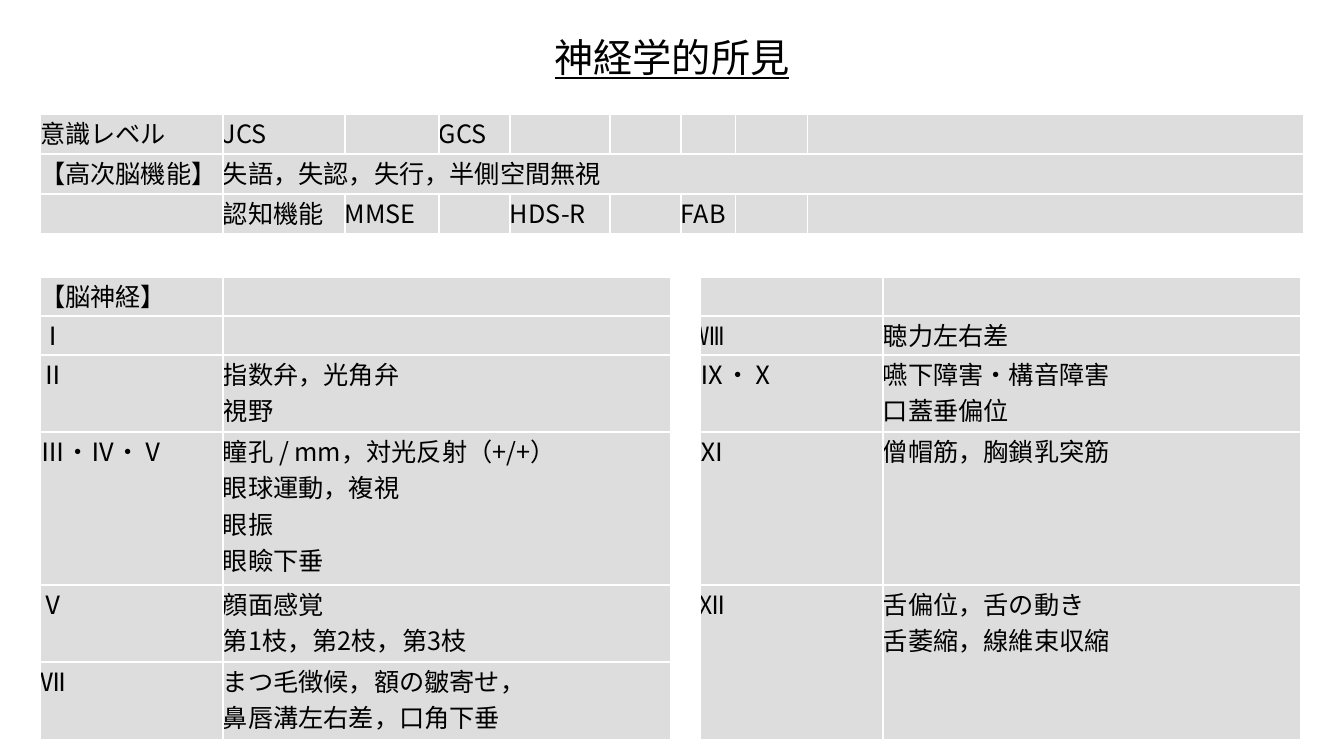
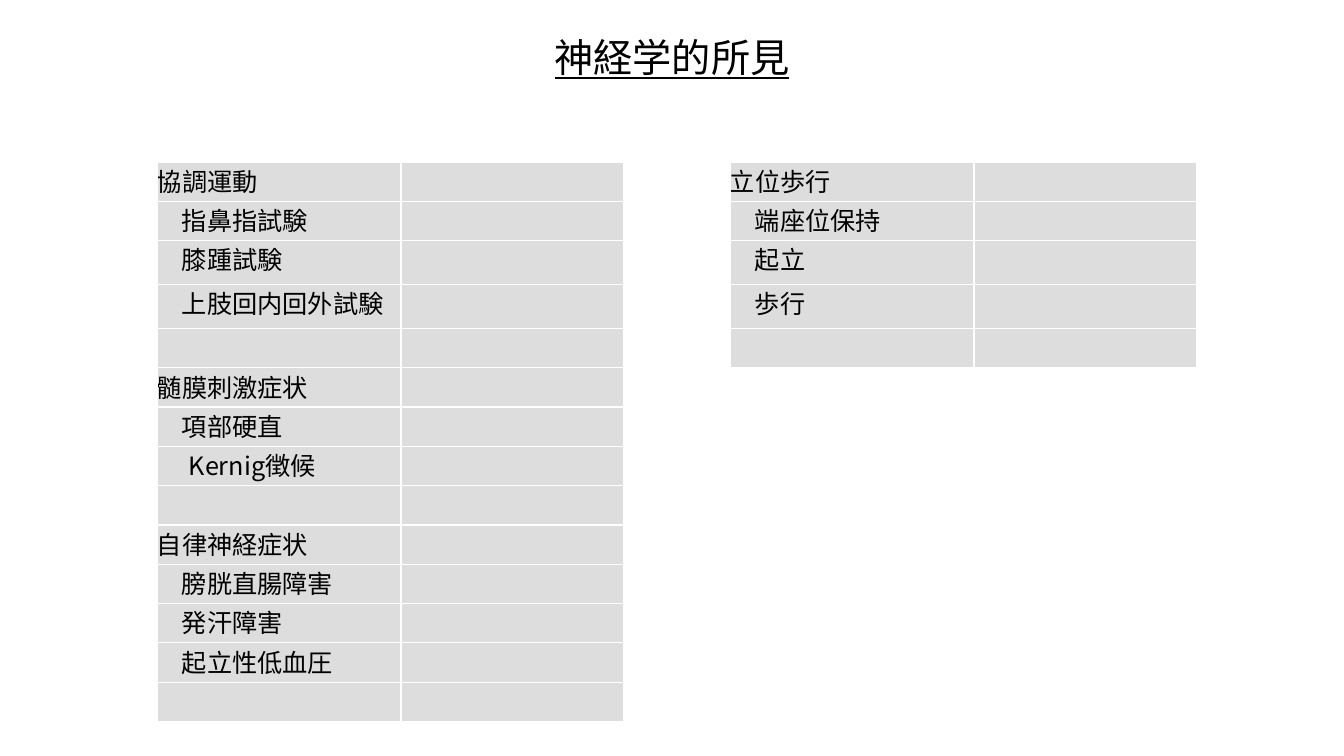
from lxml.etree import SubElement
from pptx import Presentation
from pptx.dml.color import RGBColor
from pptx.enum.text import MSO_ANCHOR, MSO_AUTO_SIZE, PP_ALIGN
from pptx.oxml import parse_xml
from pptx.oxml.ns import nsdecls, qn
from pptx.util import Emu, Pt

# Shared look
FONT = "Noto Sans CJK JP"
BLACK, WHITE, GRAY = "000000", "FFFFFF", "DDDDDD"
TITLE = "神経学的所見"
TITLE_BOX = (507, 10, 330, 93)
INDENT = 25
LATIN_GAP = 7  # extra space before an indented Latin word


def px(length):
    return Emu(round(length * 914400 / 100.8))


def color(code):
    return RGBColor.from_string(code)


def write(frame, text, size=18, align=None, underline=None, indent=0, margin=0):
    """Fill a text frame, one paragraph for each line of text."""
    frame.text = text
    for para in frame.paragraphs:
        para.alignment = align
        if indent:
            properties = para._p.get_or_add_pPr()
            properties.set("marL", str(px(indent)))
            properties.set("indent", "0")
        for span in para.runs:
            span.font.name = FONT
            span.font.size = Pt(size)
            span.font.underline = underline
            span.font.color.rgb = color(BLACK)
            east_asian = SubElement(span._r.get_or_add_rPr(), qn("a:ea"))
            east_asian.set("typeface", FONT)
    frame.margin_left = frame.margin_right = px(margin)
    frame.margin_top = frame.margin_bottom = px(margin)


def style_cell(cell):
    cell.margin_left = cell.margin_right = 0
    cell.margin_top = cell.margin_bottom = 0
    cell.fill.solid()
    cell.fill.fore_color.rgb = color(GRAY)
    # Borders come before the fill
    for index, side in enumerate(("lnL", "lnR", "lnT", "lnB")):
        cell._tc.get_or_add_tcPr().insert(index, parse_xml(
            f'<a:{side} {nsdecls("a")} w="{Pt(1)}"><a:solidFill>'
            f'<a:srgbClr val="{WHITE}"/></a:solidFill></a:{side}>'))


def add_grid(page, left, top, widths, heights, texts, merges=(), indents=None):
    """Place a table; texts and indents are keyed by (row, column)."""
    frame = page.shapes.add_table(
        len(heights), len(widths), px(left), px(top),
        px(sum(widths)), px(sum(heights)))
    table = frame.table
    table.first_row = table.horz_banding = False
    for column, width in zip(table.columns, widths):
        column.width = px(width)
    for row, height in zip(table.rows, heights):
        row.height = px(height)
    for cell in table.iter_cells():
        style_cell(cell)
    for place, text in texts.items():
        write(table.cell(*place).text_frame, text,
              indent=(indents or {}).get(place, 0))
    for first, last in merges:
        table.cell(*first).merge(table.cell(*last))


def add_page(deck):
    page = deck.slides.add_slide(deck.slide_layouts[5])
    title = page.shapes.title
    title.left, title.top, title.width, title.height = map(px, TITLE_BOX)
    frame = title.text_frame
    frame.auto_size = MSO_AUTO_SIZE.NONE
    frame.vertical_anchor = MSO_ANCHOR.MIDDLE
    write(frame, TITLE, size=28, align=PP_ALIGN.CENTER, underline=True, margin=5)
    return page


def add_nerves(page, left, top, answer_width, rows, merges=()):
    """Cranial nerves: name on the left, findings on the right."""
    texts = {(r, c): text for r, row in enumerate(rows)
             for c, text in enumerate(row) if text}
    add_grid(page, left, top, (183, answer_width),
             (39, 39, 77, 153, 77, 78), texts, merges)


def add_checklist(page, left, top, groups):
    """Each heading, its indented items, then an empty row."""
    texts, indents, row = {}, {}, 0
    for heading, items in groups.items():
        texts[row, 0] = heading
        for place, item in enumerate(items, row + 1):
            texts[place, 0] = item
            indents[place, 0] = INDENT + (LATIN_GAP if item[0].isascii() else 0)
        row += len(items) + 2
    heights = [44 if r in (2, 3) else 39.3 for r in range(row)]
    add_grid(page, left, top, (244, 223), heights, texts, indents=indents)


def add_consciousness(page, left, top):
    texts = {
        (0, 0): "意識レベル", (0, 1): "JCS", (0, 3): "GCS",
        (1, 0): "【高次脳機能】", (1, 1): "失語，失認，失行，半側空間無視",
        (2, 1): "認知機能", (2, 2): "MMSE", (2, 4): "HDS-R", (2, 6): "FAB",
    }
    add_grid(page, left, top, (183, 122, 94, 71, 100, 71, 55, 72, 496),
             (40, 40, 40), texts, merges=[((1, 1), (1, 8))])


def build_nerve_page(deck):
    page = add_page(deck)
    add_nerves(page, 40, 277, 448, [
        ("【脳神経】", ""),
        ("Ⅰ", ""),
        ("Ⅱ", "指数弁，光角弁\n視野"),
        ("Ⅲ・Ⅳ・Ⅴ", "瞳孔 / mm，対光反射（+/+）\n眼球運動，複視\n眼振\n眼瞼下垂"),
        ("Ⅴ", "顔面感覚\n第1枝，第2枝，第3枝"),
        ("Ⅶ", "まつ毛徴候，額の皺寄せ，\n鼻唇溝左右差，口角下垂"),
    ])
    add_nerves(page, 700, 277, 418, [
        ("", ""),
        ("Ⅷ", "聴力左右差"),
        ("Ⅸ・Ⅹ", "嚥下障害・構音障害\n口蓋垂偏位"),
        ("Ⅺ", "僧帽筋，胸鎖乳突筋"),
        ("Ⅻ", "舌偏位，舌の動き\n舌萎縮，線維束収縮"),
    ], merges=[((4, c), (5, c)) for c in (0, 1)])
    add_consciousness(page, 40, 114)


def build_motor_page(deck):
    page = add_page(deck)
    add_checklist(page, 730, 162, {
        "立位歩行": ["端座位保持", "起立", "歩行"],
    })
    add_checklist(page, 157, 162, {
        "協調運動": ["指鼻指試験", "膝踵試験", "上肢回内回外試験"],
        "髄膜刺激症状": ["項部硬直", "Kernig徴候"],
        "自律神経症状": ["膀胱直腸障害", "発汗障害", "起立性低血圧"],
    })


def main():
    deck = Presentation()
    deck.slide_width, deck.slide_height = px(1344), px(756)
    build_nerve_page(deck)
    build_motor_page(deck)
    deck.save("out.pptx")


if __name__ == "__main__":
    main()
